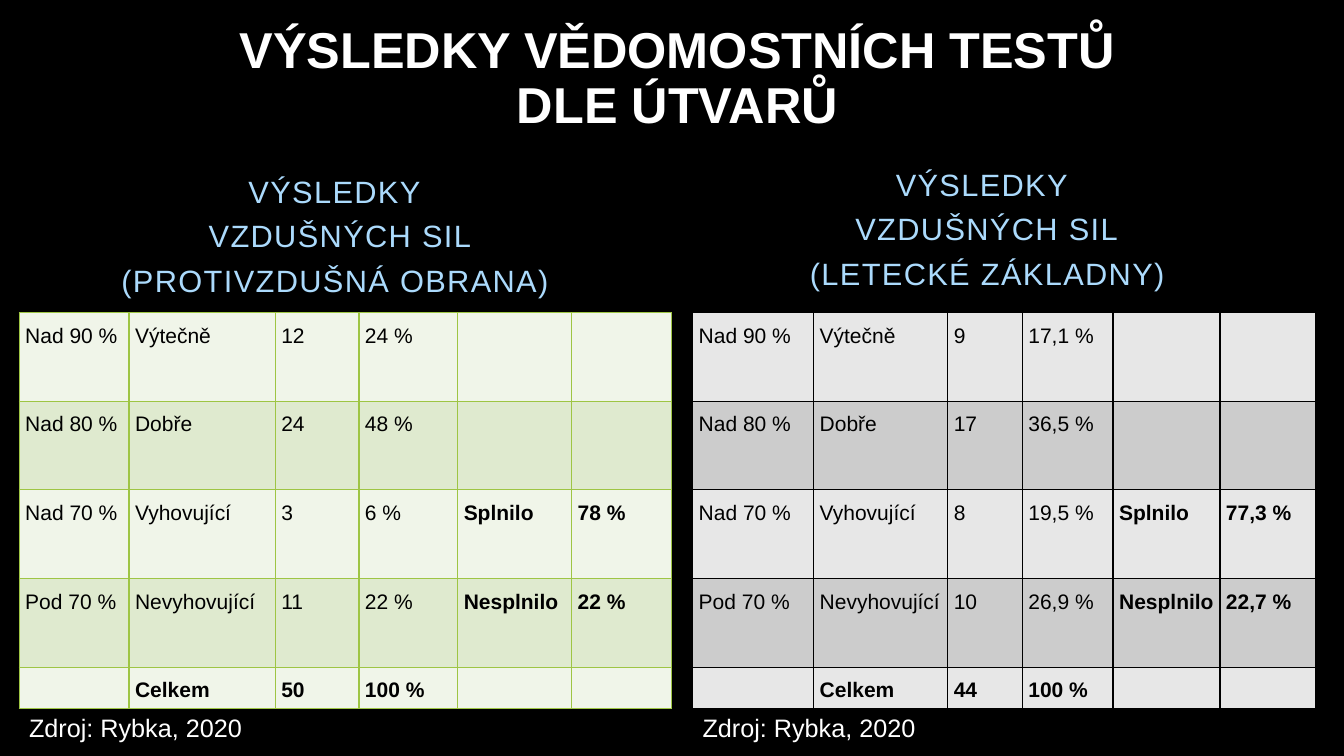
"""Builds the slide comparing knowledge test results of two air force branches."""
from lxml import etree
from pptx import Presentation
from pptx import util as u
from pptx.dml import color
from pptx.enum import text as t
from pptx.oxml import ns

FONT = "Arial"
TITLE = "VÝSLEDKY VĚDOMOSTNÍCH TESTŮ DLE ÚTVARŮ"
CREDIT = "Zdroj: Rybka, 2020"
GRADES = [("Nad 90 %", "Výtečně"), ("Nad 80 %", "Dobře"), ("Nad 70 %", "Vyhovující"),
          ("Pod 70 %", "Nevyhovující"), ("", "Celkem")]
VERDICTS = ["", "", "Splnilo", "Nesplnilo", ""]
ROW_HEIGHTS = [0.88] * 4 + [0.41]
TABLE_TOP, CREDIT_TOP = 3.1, 7.02
BRANCHES = [
    {"heading": "VÝSLEDKY\v VZDUŠNÝCH SIL (PROTIVZDUŠNÁ OBRANA)",
     "heading_at": (0.99, 2.24), "left": 0.19,
     "widths": [1.09, 1.45, 0.83, 0.98, 1.13, 0.99],
     "counts": ["12", "24", "3", "11", "50"],
     "shares": ["24 %", "48 %", "6 %", "22 %", "100 %"],
     "totals": ["", "", "78 %", "22 %", ""],
     "bands": ("F0F5E9", "DFEACF"), "border": "9EC544"},
    {"heading": "VÝSLEDKY\v VZDUŠNÝCH SIL\v (LETECKÉ ZÁKLADNY)",
     "heading_at": (7.41, 2.17), "left": 6.87,
     "widths": [1.2, 1.33, 0.74, 0.9, 1.06, 0.95],
     "counts": ["9", "17", "8", "10", "44"],
     "shares": ["17,1 %", "36,5 %", "19,5 %", "26,9 %", "100 %"],
     "totals": ["", "", "77,3 %", "22,7 %", ""],
     "bands": ("E7E7E7", "CCCCCC"), "border": "000000"},
]


def rgb(code):
    return color.RGBColor.from_string(code)


def write(frame, words, size, ink="FFFFFF", bold=False, align=t.PP_ALIGN.LEFT,
          line=1.0, before=0, after=0, tracking=0):
    paragraph = frame.paragraphs[0]
    paragraph.text = words
    paragraph.alignment = align
    paragraph.line_spacing = line
    paragraph.space_before, paragraph.space_after = u.Pt(before), u.Pt(after)
    for run in paragraph.runs:
        run.font.name, run.font.size, run.font.bold = FONT, u.Pt(size), bold
        run.font.color.rgb = rgb(ink)
        if tracking:
            run.font._element.set("spc", str(tracking * 100))


def add_text(slide, at, words, anchor=t.MSO_ANCHOR.TOP, **form):
    frame = slide.shapes.add_textbox(*map(u.Inches, at)).text_frame
    frame.word_wrap = True
    frame.vertical_anchor = anchor
    write(frame, words, **form)


def add_borders(cell, ink):
    properties = cell._tc.get_or_add_tcPr()
    for side in ("lnL", "lnR", "lnT", "lnB"):
        border = etree.SubElement(properties, ns.qn(f"a:{side}"), w=str(u.Pt(1)))
        solid = etree.SubElement(border, ns.qn("a:solidFill"))
        etree.SubElement(solid, ns.qn("a:srgbClr"), val=ink)


def add_results(slide, branch):
    rows = [(*grade, *rest) for grade, *rest in zip(
        GRADES, branch["counts"], branch["shares"], VERDICTS, branch["totals"])]
    widths = branch["widths"]
    at = (branch["left"], TABLE_TOP, sum(widths), sum(ROW_HEIGHTS))
    results = slide.shapes.add_table(len(rows), len(widths), *map(u.Inches, at)).table
    results.first_row = results.horz_banding = False
    for column, width in zip(results.columns, widths):
        column.width = u.Inches(width)
    for r, (row, height) in enumerate(zip(rows, ROW_HEIGHTS)):
        results.rows[r].height = u.Inches(height)
        for c, words in enumerate(row):
            cell = results.cell(r, c)
            cell.margin_left = cell.margin_right = u.Inches(0.06)
            cell.margin_top = cell.margin_bottom = 0
            add_borders(cell, branch["border"])
            cell.fill.solid()
            cell.fill.fore_color.rgb = rgb(branch["bands"][r % 2])
            write(cell.text_frame, words, size=15, ink="000000",
                  bold=c >= 4 or r == len(rows) - 1,
                  align=t.PP_ALIGN.JUSTIFY, line=1.5, after=7.1)


def main():
    deck = Presentation()
    deck.slide_width, deck.slide_height = u.Inches(13.33), u.Inches(7.5)
    slide = deck.slides.add_slide(deck.slide_layouts[6])
    slide.background.fill.solid()
    slide.background.fill.fore_color.rgb = rgb("000000")
    add_text(slide, (1.96, 0.13, 9.52, 1.32), TITLE, anchor=t.MSO_ANCHOR.MIDDLE,
             size=36, bold=True, align=t.PP_ALIGN.CENTER, line=0.9)
    for branch in BRANCHES:
        add_text(slide, (*branch["heading_at"], 4.67, 0.77), branch["heading"],
                 anchor=t.MSO_ANCHOR.BOTTOM, size=22, ink="ABDAFC",
                 align=t.PP_ALIGN.CENTER, line=1.2, before=10, tracking=1)
        add_results(slide, branch)
        add_text(slide, (branch["left"], CREDIT_TOP, 3.4, 0.4), CREDIT, size=18)
    deck.save("out.pptx")


if __name__ == "__main__":
    main()
